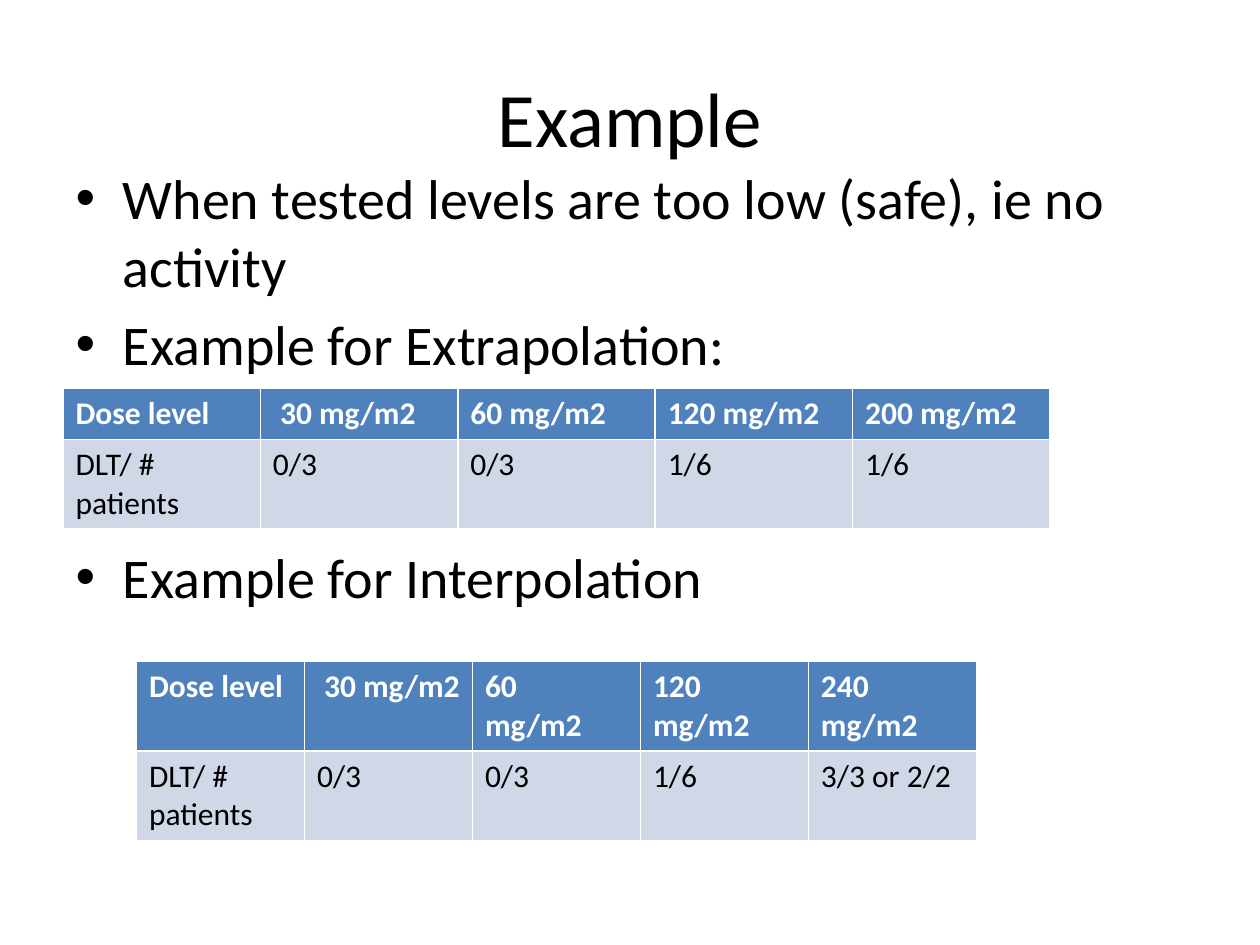
from pptx import Presentation
from pptx.dml.color import RGBColor
from pptx.enum import text
from pptx.util import Pt

HUES = {"ink": "000000", "white": "FFFFFF", "head": "4F81BD", "band": "D0D8E8"}


class Deck:
    """Holds the style and the current slide."""

    font = "Calibri"

    def __init__(self, wide, high):
        self.prs = Presentation()
        self.prs.slide_width, self.prs.slide_height = Pt(wide), Pt(high)
        self.slide = self.prs.slides.add_slide(self.prs.slide_layouts[1])

    def hue(self, name):
        return RGBColor.from_string(HUES[name])

    def style(self, para, size, hue, bold=False):
        font = para.font
        font.name, font.size, font.bold = self.font, Pt(size), bold
        font.color.rgb = self.hue(hue)

    def place(self, shape, x, y, w, h):
        shape.left, shape.top, shape.width, shape.height = map(Pt, (x, y, w, h))

    def title(self, words, *box):
        shape = self.slide.shapes.title
        self.place(shape, *box)
        shape.text_frame.text = words
        para = shape.text_frame.paragraphs[0]
        para.alignment = text.PP_ALIGN.CENTER
        self.style(para, 44, "ink")

    def body(self, items, *box):
        shape = self.slide.placeholders[1]
        self.place(shape, *box)
        frame = shape.text_frame
        frame.text = "\n".join(items)
        for para in frame.paragraphs:
            self.style(para, 32, "ink")
        return frame.paragraphs

    def table(self, rows, x, y, w, row=29.2):
        # The default table style supplies the white borders
        grid = self.slide.shapes.add_table(
            len(rows), len(rows[0]), Pt(x), Pt(y), Pt(w), Pt(row * len(rows))).table
        for r, line in enumerate(rows):
            top = r == 0
            for c, words in enumerate(line):
                cell = grid.cell(r, c)
                cell.text = words
                cell.fill.solid()
                cell.fill.fore_color.rgb = self.hue("head" if top else "band")
                for para in cell.text_frame.paragraphs:
                    self.style(para, 18, "white" if top else "ink", top)


def main():
    deck = Deck(720, 540)

    # Title and list, with room for the first table before the last item
    deck.title("Example", 36, 21.6, 648, 90)
    paras = deck.body([
        "When tested levels are too low (safe), ie no activity",
        "Example for Extrapolation:",
        "Example for Interpolation",
    ], 36, 90, 648, 450)
    paras[-1].space_before = Pt(94.7)

    # Extrapolation table
    deck.table([
        ["Dose level", " 30 mg/m2", "60 mg/m2", "120 mg/m2", "200 mg/m2"],
        ["DLT/ # patients", "0/3", "0/3", "1/6", "1/6"],
    ], 36, 222, 564)

    # Interpolation table
    deck.table([
        ["Dose level", " 30 mg/m2", "60\nmg/m2", "120 mg/m2", "240\nmg/m2"],
        ["DLT/ # patients", "0/3", "0/3", "1/6", "3/3 or 2/2"],
    ], 78, 378, 480)

    deck.prs.save("out.pptx")


if __name__ == "__main__":
    main()
